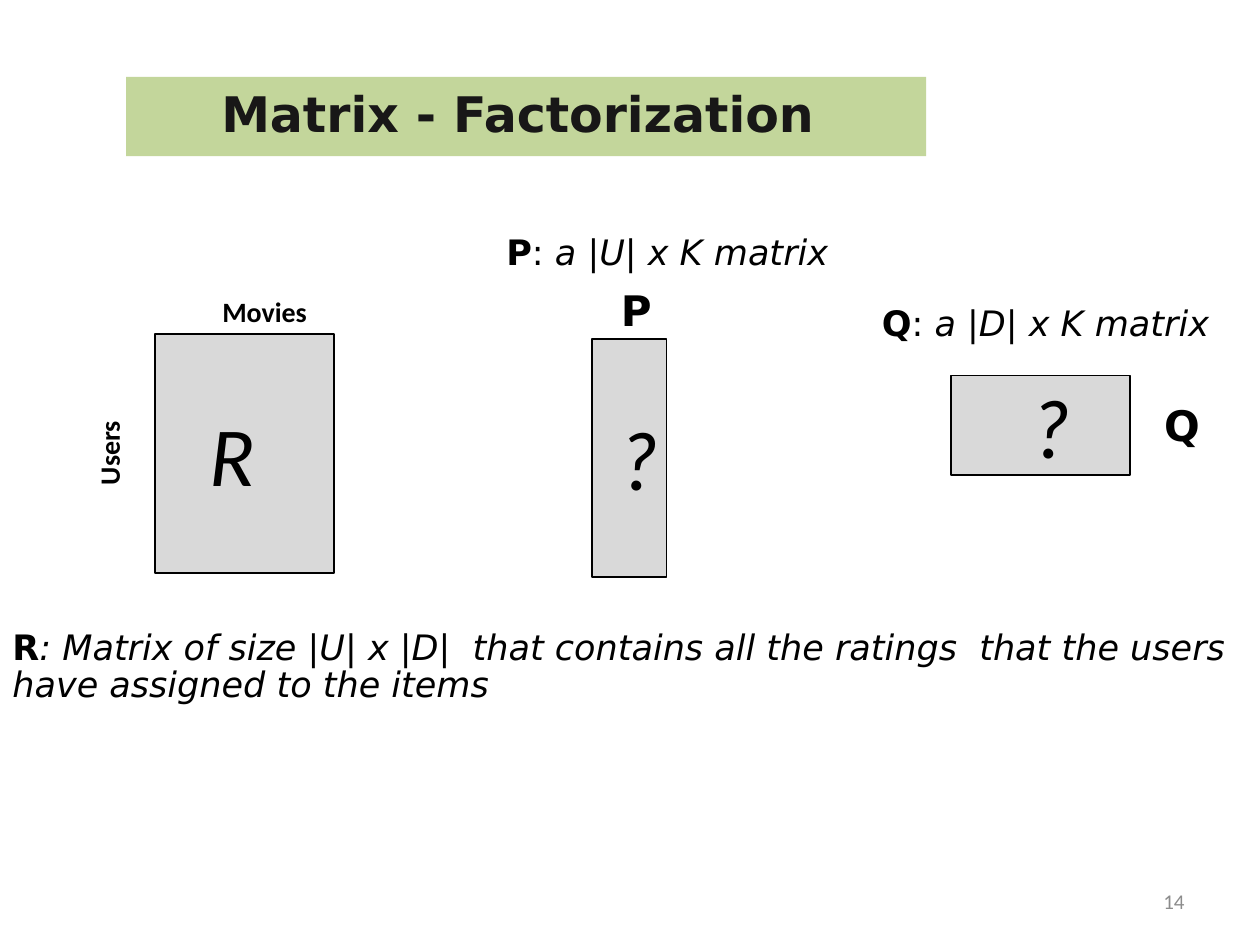
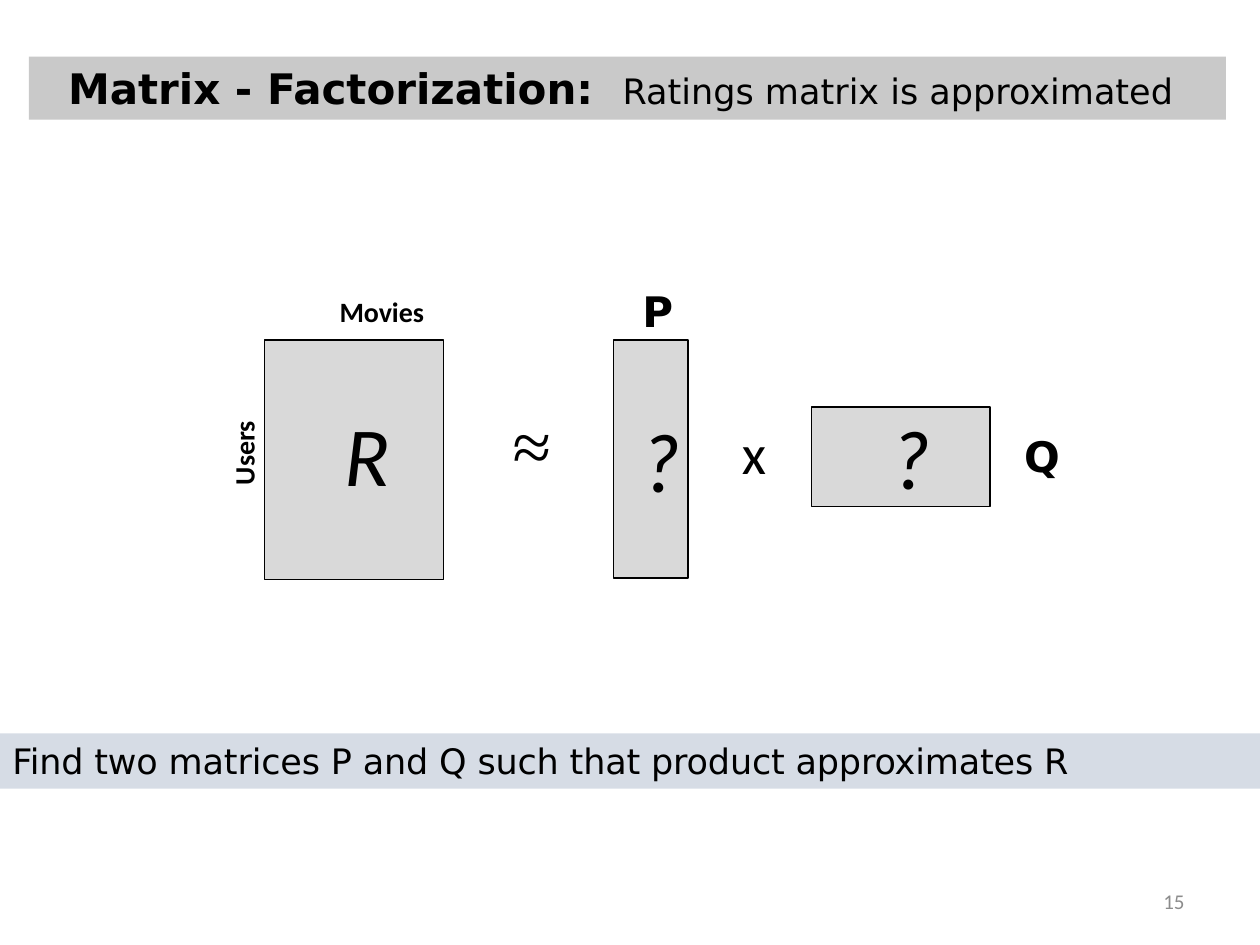
from dataclasses import dataclass

import pptx
import pptx.dml.color
import pptx.enum.shapes
import pptx.enum.text
import pptx.util

ALIGN = pptx.enum.text.PP_ALIGN
ANCHOR = pptx.enum.text.MSO_ANCHOR


@dataclass(frozen=True)
class Theme:
    black: str = "000000"
    title_ink: str = "181717"
    number_ink: str = "8C8C8C"
    matrix_fill: str = "D9D9D9"
    green_band: str = "C3D69B"
    grey_band: str = "C9C9C9"
    blue_band: str = "D6DCE5"
    body_font: str = "DejaVu Sans"
    label_font: str = "Calibri"
    sign_font: str = "Times New Roman"
    number_size: int = 12
    axis_size: int = 16
    body_size: int = 20
    heading_size: int = 24
    title_size: int = 28
    times_size: int = 32
    approx_size: int = 40
    symbol_size: int = 48


THEME = Theme()
WIDTH = pptx.util.Inches(10)
HEIGHT = pptx.util.Inches(7.5)
GRID_COLUMNS = 100
GRID_ROWS = 75


def grid_box(left, top, columns, rows):
    column, row = WIDTH / GRID_COLUMNS, HEIGHT / GRID_ROWS
    return [round(n * unit) for n, unit in
            ((left, column), (top, row), (columns, column), (rows, row))]


def color(value):
    return pptx.dml.color.RGBColor.from_string(value)


def write_text(shape, runs, align=ALIGN.LEFT, anchor=ANCHOR.TOP, wrap=True,
               line_spacing=None, before=0, after=0, tracking=None, **base):
    frame = shape.text_frame
    frame.word_wrap = wrap
    frame.vertical_anchor = anchor
    paragraph = frame.paragraphs[0]
    paragraph.alignment = align
    paragraph.line_spacing = line_spacing
    paragraph.space_before = pptx.util.Pt(before)
    paragraph.space_after = pptx.util.Pt(after)
    for text, changes in runs:
        style = {"font": THEME.body_font, "size": THEME.body_size, "ink": THEME.black,
                 "bold": False, "italic": False} | base | changes
        run = paragraph.add_run()
        run.text = text
        run.font.name = style["font"]
        run.font.size = pptx.util.Pt(style["size"])
        run.font.color.rgb = color(style["ink"])
        run.font.bold = style["bold"]
        run.font.italic = style["italic"]
        if tracking is not None:
            run._r.get_or_add_rPr().set("spc", str(round(tracking * 100)))


def add_text(slide, box, *runs, rotation=0, **text_format):
    shape = slide.shapes.add_textbox(*grid_box(*box))
    shape.rotation = rotation
    write_text(shape, runs, **text_format)


def add_rectangle(slide, box, fill, outline=None):
    shape = slide.shapes.add_shape(
        pptx.enum.shapes.MSO_SHAPE.RECTANGLE, *grid_box(*box))
    shape.shadow.inherit = False
    shape.fill.solid()
    shape.fill.fore_color.rgb = color(fill)
    if outline:
        shape.line.color.rgb = color(outline)
        shape.line.width = pptx.util.Pt(1)
    else:
        shape.line.fill.background()
    return shape


def add_band(slide, box, fill, *runs, **text_format):
    write_text(add_rectangle(slide, box, fill), runs, before=6, after=6, **text_format)


def add_matrix(slide, left, top, columns, rows, symbol, shift=(0, 0)):
    add_rectangle(slide, (left, top, columns, rows), THEME.matrix_fill, THEME.black)
    symbol_columns, symbol_rows = 3.5, 9.1
    symbol_left = left + (columns - symbol_columns) / 2 + shift[0]
    symbol_top = top + (rows - symbol_rows) / 2 + shift[1]
    add_text(slide, (symbol_left, symbol_top, symbol_columns, symbol_rows),
             (symbol, {}), align=ALIGN.CENTER, italic=True,
             font=THEME.label_font, size=THEME.symbol_size)


def add_name(slide, left, top, name):
    add_text(slide, (left, top, 4.9, 5), (name, {}), wrap=False,
             size=THEME.heading_size, bold=True)


def add_ratings_matrix(slide, left, top, users_left, movies_left, shift):
    add_matrix(slide, left, top, 14.2, 19, "R", shift)
    axis = {"align": ALIGN.CENTER, "font": THEME.label_font,
            "size": THEME.axis_size, "bold": True}
    add_text(slide, (users_left, 34.1, 8.7, 3.7), ("Users", {}), rotation=270, **axis)
    add_text(slide, (movies_left, 22.9, 14.8, 3.7), ("Movies", {}), **axis)


def add_user_factors(slide, left, top):
    add_matrix(slide, left, top, 5.9, 18.9, "?")
    add_name(slide, left + 1.3, top - 4.8, "P")


def add_item_factors(slide, left, top):
    add_matrix(slide, left, top, 14.2, 7.9, "?")
    add_name(slide, left + 15.9, top + 1.4, "Q")


def add_definition(slide, box, name, description):
    add_text(slide, box, (name, {"bold": True}), (": ", {}),
             (description, {"italic": True}), wrap=False)


def add_slide(presentation, number):
    slide = presentation.slides.add_slide(presentation.slide_layouts[6])
    add_text(slide, (71.7, 69.5, 23.3, 4), (str(number), {}),
             align=ALIGN.RIGHT, anchor=ANCHOR.MIDDLE, font=THEME.label_font,
             size=THEME.number_size, ink=THEME.number_ink)
    return slide


def add_definitions_slide(presentation):
    slide = add_slide(presentation, 14)
    add_ratings_matrix(slide, 12.3, 26.5, users_left=4.3, movies_left=13.6, shift=(-2, 0))
    add_user_factors(slide, 47, 26.9)
    add_item_factors(slide, 75.5, 29.8)
    add_definition(slide, (39.2, 17.8, 30.3, 4.4), "P", "a |U| x K matrix")
    add_definition(slide, (69, 23.4, 30.7, 4.4), "Q", "a |D| x K matrix")
    add_text(slide, (0, 49.5, 99.8, 7.1), ("R", {"bold": True}),
             (": Matrix of size |U| x |D|  that contains all the ratings  "
              "that the users have assigned to the items", {"italic": True}),
             line_spacing=0.9, before=10)
    add_band(slide, (10, 6.1, 63.5, 6.3), THEME.green_band,
             ("Matrix - Factorization ", {}), align=ALIGN.CENTER, anchor=ANCHOR.MIDDLE,
             line_spacing=0.9, size=THEME.title_size, bold=True, ink=THEME.title_ink)


def add_approximation_slide(presentation):
    slide = add_slide(presentation, 15)
    add_ratings_matrix(slide, 21, 27, users_left=15, movies_left=22.9, shift=(0, -0.5))
    add_text(slide, (39.7, 31.4, 4.4, 7.7), ("≈", {}), align=ALIGN.CENTER,
             font=THEME.sign_font, size=THEME.approx_size)
    add_user_factors(slide, 48.7, 27)
    add_text(slide, (57.9, 32.7, 3.1, 6.4), ("x", {}),
             font=THEME.label_font, size=THEME.times_size)
    add_item_factors(slide, 64.4, 32.3)
    heading = {"size": THEME.heading_size}
    add_band(slide, (2.3, 4.5, 95, 5), THEME.grey_band,
             ("Matrix - Factorization:  ", heading | {"bold": True}),
             ("Ratings matrix is approximated", {}), (" ", heading), align=ALIGN.CENTER)
    add_band(slide, (0, 58.2, 100, 4.4), THEME.blue_band,
             ("Find two matrices P and Q such that product approximates R", {}),
             tracking=-0.1)


def main():
    presentation = pptx.Presentation()
    presentation.slide_width = WIDTH
    presentation.slide_height = HEIGHT
    add_definitions_slide(presentation)
    add_approximation_slide(presentation)
    presentation.save("out.pptx")


if __name__ == "__main__":
    main()
